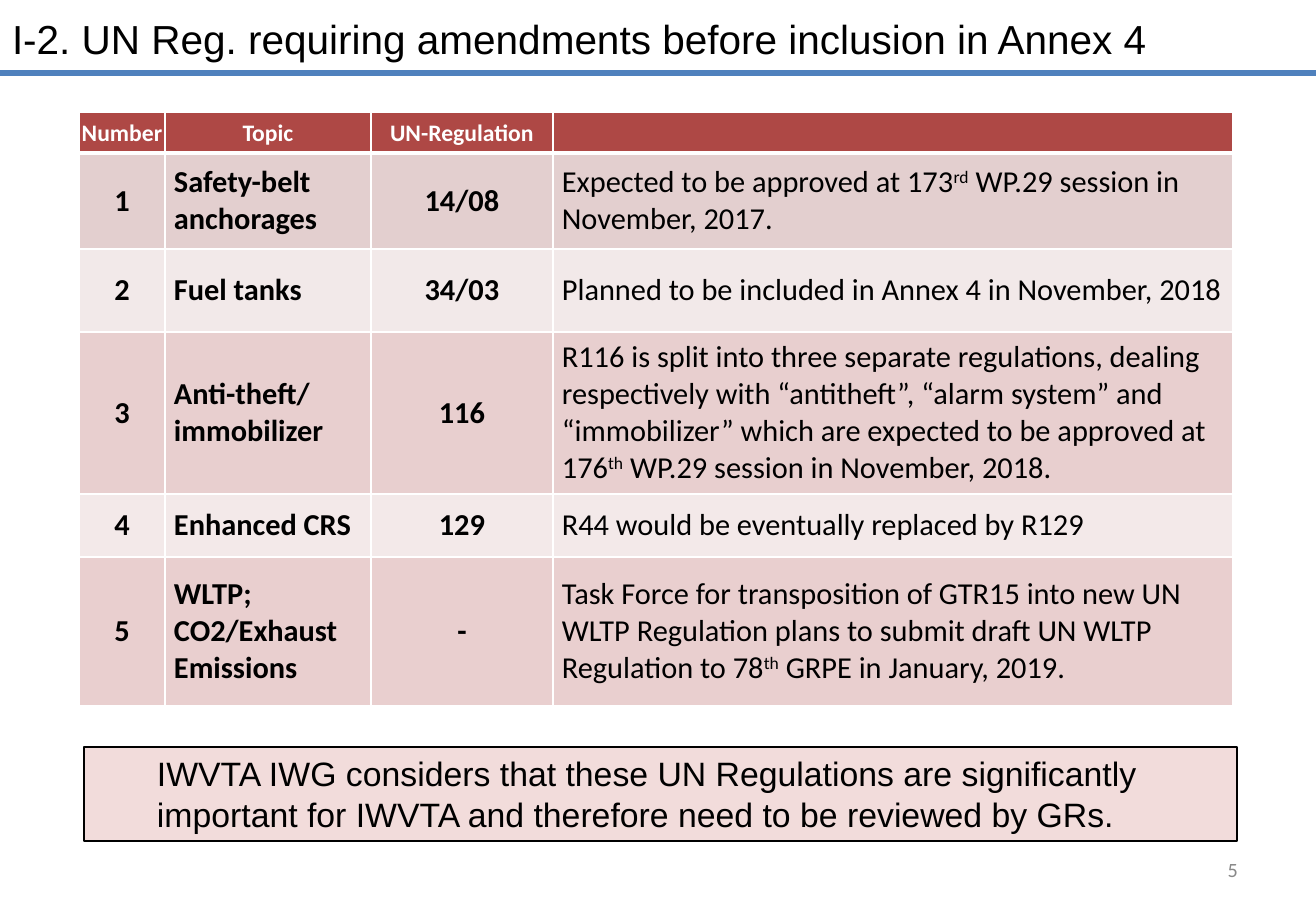
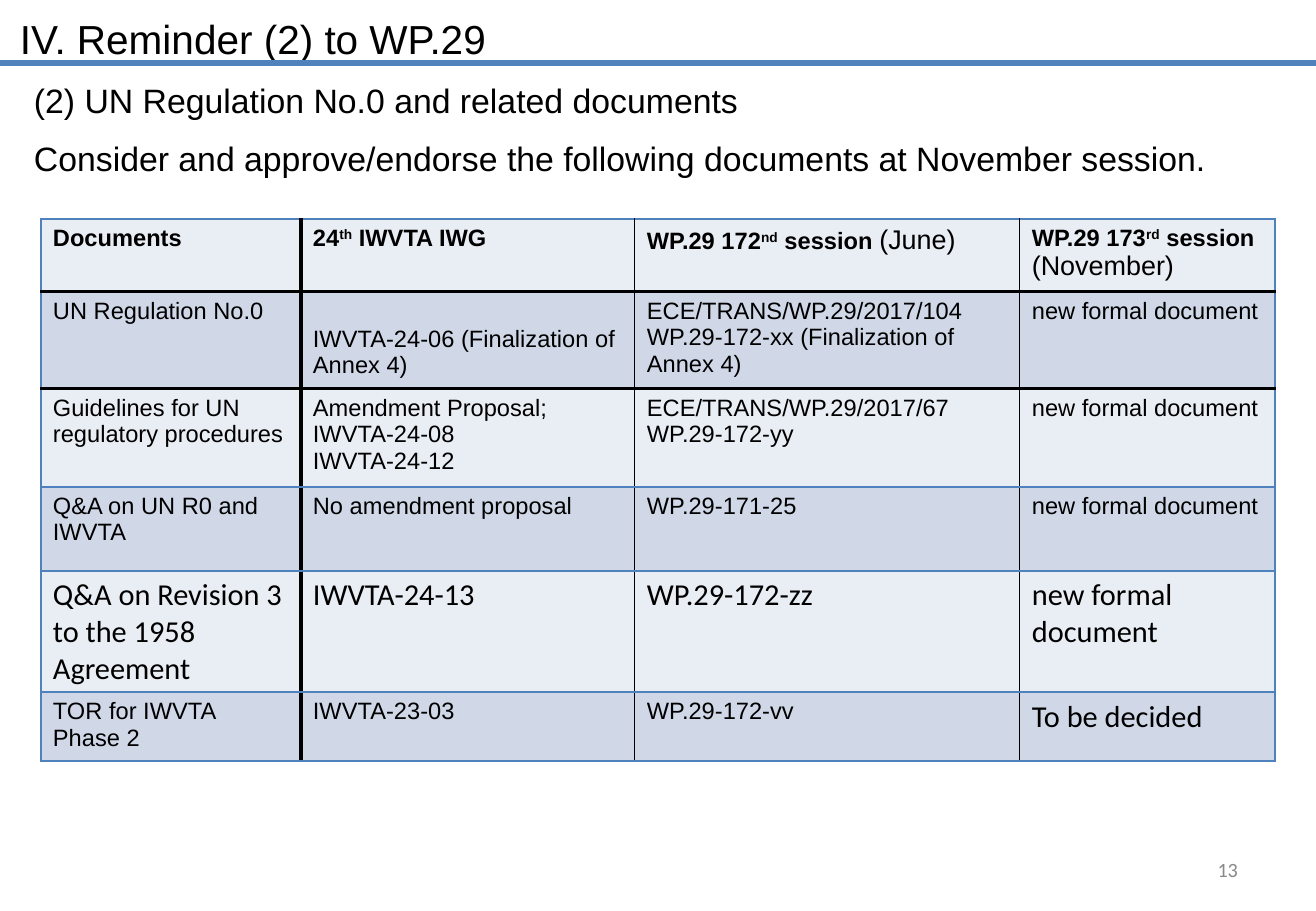
from dataclasses import dataclass

from lxml import etree
from pptx import Presentation
from pptx.dml.color import RGBColor
from pptx.enum.shapes import MSO_CONNECTOR, MSO_SHAPE
from pptx.enum.text import MSO_ANCHOR, MSO_AUTO_SIZE, PP_ALIGN
from pptx.oxml.ns import qn
from pptx.util import Pt

LEFT, CENTER, RIGHT, JUSTIFY = PP_ALIGN.LEFT, PP_ALIGN.CENTER, PP_ALIGN.RIGHT, PP_ALIGN.JUSTIFY
TOP, MIDDLE = MSO_ANCHOR.TOP, MSO_ANCHOR.MIDDLE
STRAIGHT, RECTANGLE = MSO_CONNECTOR.STRAIGHT, MSO_SHAPE.RECTANGLE
TITLE_ONLY = 5
EMU_PER_PX = 7526
SLIDE_WIDTH, SLIDE_HEIGHT = 1316, 911


@dataclass(frozen=True)
class Theme:
    heading_font: str = "Arial"
    body_font: str = "Calibri"
    black: str = "000000"
    white: str = "FFFFFF"
    grey: str = "898989"
    blue: str = "4F81BD"
    red_header: str = "AE4845"
    red_rows: tuple = ("E3CFCF", "F2E9E9", "E8CFCF", "F3E9E9", "E9CFCF")
    note_fill: str = "F2DCDB"
    blue_rows: tuple = ("E9EDF4", "D0D8E8")
    title_size: int = 24
    lead_size: int = 20
    large_size: int = 18
    tail_size: int = 16
    small_size: int = 14
    number_size: int = 12


THEME = Theme()

# Content: ^ encloses superscript, | starts a larger regular tail
AMENDMENTS = {
    "title": "I-2. UN Reg. requiring amendments before inclusion in Annex 4",
    "number": "5",
    "columns": (86, 206, 182, 680),
    "rows": (
        (41, ("Number", "Topic", "UN-Regulation", "")),
        (96, ("1", "Safety-belt anchorages", "14/08",
              "Expected to be approved at 173^rd^ WP.29 session in November, 2017.")),
        (83, ("2", "Fuel tanks", "34/03",
              "Planned to be included in Annex 4 in November, 2018")),
        (162, ("3", "Anti-theft/ immobilizer", "116",
               "R116 is split into three separate regulations, dealing respectively with "
               "“antitheft”, “alarm system” and “immobilizer” which are expected to be "
               "approved at 176^th^ WP.29 session in November, 2018.")),
        (63, ("4", "Enhanced CRS", "129", "R44 would be eventually replaced by R129")),
        (149, ("5", "WLTP; CO2/Exhaust Emissions", "-",
               "Task Force for transposition of GTR15 into new UN WLTP Regulation plans to "
               "submit draft UN WLTP Regulation to 78^th^ GRPE in January, 2019.")),
    ),
    "note": "IWVTA IWG considers that these UN Regulations are significantly "
            "important for IWVTA and therefore need to be reviewed by GRs.",
}

REMINDER = {
    "title": "IV. Reminder (2) to WP.29",
    "number": "13",
    "lead": "(2) UN Regulation No.0 and related documents\n"
            "Consider and approve/endorse the following documents at November session.",
    "columns": (260, 334, 385, 255),
    "rows": (
        (72, ("Documents", "24^th^ IWVTA IWG", "WP.29 172^nd^ session |(June)",
              "WP.29 173^rd^ session |(November)")),
        (97, ("UN Regulation No.0", "IWVTA-24-06 (Finalization of Annex 4)",
              "ECE/TRANS/WP.29/2017/104\nWP.29-172-xx (Finalization of Annex 4)",
              "new formal document")),
        (98, ("Guidelines for UN regulatory procedures",
              "Amendment Proposal;\nIWVTA-24-08\nIWVTA-24-12",
              "ECE/TRANS/WP.29/2017/67\nWP.29-172-yy", "new formal document")),
        (84, ("Q&A on UN R0 and IWVTA", "No amendment proposal", "WP.29-171-25",
              "new formal document")),
        (121, ("Q&A on Revision 3\nto the 1958 Agreement", "IWVTA-24-13", "WP.29-172-zz",
               "new formal document")),
        (69, ("TOR for IWVTA Phase 2", "IWVTA-23-03", "WP.29-172-vv", "To be decided")),
    ),
    "large_cells": {(4, 0), (4, 1), (4, 2), (4, 3), (5, 3)},
    "lowered_cell": (1, 1),
}


def px(length):
    return length * EMU_PER_PX


def box(*lengths):
    return [px(length) for length in lengths]


def color(value):
    return RGBColor.from_string(value)


def write_text(frame, text, *, size, font=THEME.heading_font, ink=THEME.black,
               bold=False, align=LEFT, gap=0):
    """Write one paragraph per line, with superscripts and an optional tail."""
    frame.word_wrap = True
    for index, line in enumerate(text.split("\n")):
        paragraph = frame.add_paragraph() if index else frame.paragraphs[0]
        paragraph.alignment = align
        if index and gap:
            paragraph.space_before = Pt(gap)
        main, _, tail = line.partition("|")
        pieces = [(part, size, bold, position % 2)
                  for position, part in enumerate(main.split("^"))]
        pieces.append((tail, THEME.tail_size, False, 0))
        for part, part_size, part_bold, raised in pieces:
            if not part:
                continue
            run = paragraph.add_run()
            run.text = part
            run.font.name, run.font.size, run.font.bold = font, Pt(part_size), part_bold
            run.font.color.rgb = color(ink)
            if raised:
                run._r.get_or_add_rPr().set("baseline", "30000")


def set_margins(target, left, top, right, bottom):
    target.margin_left, target.margin_top = px(left), px(top)
    target.margin_right, target.margin_bottom = px(right), px(bottom)


def set_borders(cell, **borders):
    """Draw the cell's sides; each border is a (color, points) pair."""
    properties = cell._tc.get_or_add_tcPr()
    for side in "LRTB":
        ink, width = borders[side]
        line = etree.SubElement(properties, qn("a:ln" + side), w=str(int(Pt(width))))
        fill = etree.SubElement(line, qn("a:solidFill"))
        etree.SubElement(fill, qn("a:srgbClr"), val=ink)


def add_grid(slide, left, top, content, format_cell):
    """Add a table and let format_cell(cell, row, column, text) style each cell."""
    columns, rows = content["columns"], content["rows"]
    height = sum(row_height for row_height, _ in rows)
    table = slide.shapes.add_table(len(rows), len(columns),
                                   *box(left, top, sum(columns), height)).table
    table.horz_banding = False
    for index, width in enumerate(columns):
        table.columns[index].width = px(width)
    for row, (row_height, texts) in enumerate(rows):
        table.rows[row].height = px(row_height)
        for column, text in enumerate(texts):
            format_cell(table.cell(row, column), row, column, text)


def add_base_slide(presentation, content, title_left, rule_y):
    """Add a slide with its title, blue rule and slide number."""
    slide = presentation.slides.add_slide(presentation.slide_layouts[TITLE_ONLY])
    title = slide.shapes.title
    title.left, title.top, title.width, title.height = box(
        title_left, 8, SLIDE_WIDTH - title_left, 61)
    title.text_frame.vertical_anchor = TOP
    title.text_frame.auto_size = MSO_AUTO_SIZE.NONE
    set_margins(title.text_frame, 12, 6, 12, 6)
    write_text(title.text_frame, content["title"], size=THEME.title_size)

    rule = slide.shapes.add_connector(STRAIGHT, *box(0, rule_y, SLIDE_WIDTH, rule_y))
    rule.line.color.rgb, rule.line.width = color(THEME.blue), Pt(3)
    etree.SubElement(rule._element.spPr, qn("a:effectLst"))

    number = slide.shapes.add_textbox(*box(943, 845, 307, 49)).text_frame
    number.vertical_anchor = MIDDLE
    write_text(number, content["number"], size=THEME.number_size,
               font=THEME.body_font, ink=THEME.grey, align=RIGHT)
    return slide


def format_amendment_cell(cell, row, column, text):
    header = row == 0
    thin, thick = (THEME.white, 1), (THEME.white, 3)
    set_borders(cell, L=thin, R=thin, T=thick if row == 1 else thin,
                B=thick if header else thin)
    cell.fill.solid()
    cell.fill.fore_color.rgb = color(THEME.red_header if header else THEME.red_rows[row - 1])
    cell.vertical_anchor = MIDDLE
    set_margins(cell, *((1, 1, 1, 0) if header else (9, 0, 9, 0)))
    write_text(cell.text_frame, text, font=THEME.body_font,
               size=THEME.small_size if header else THEME.large_size,
               ink=THEME.white if header else THEME.black,
               bold=header or column < 3,
               align=CENTER if header else (CENTER, JUSTIFY, CENTER, LEFT)[column])


def format_document_cell(cell, row, column, text):
    blue, thin, thick = (THEME.blue, 1), (THEME.black, 0.75), (THEME.black, 2.25)
    verticals = (blue, thick, thin, thin, blue)
    horizontals = (blue, thick, thick, blue, blue, blue, blue)
    set_borders(cell, L=verticals[column], R=verticals[column + 1],
                T=horizontals[row], B=horizontals[row + 1])
    cell.fill.solid()
    cell.fill.fore_color.rgb = color(THEME.blue_rows[row % 2])
    lowered = (row, column) == REMINDER["lowered_cell"]
    set_margins(cell, 12, 34 if lowered else 6, 12, 6)
    large = (row, column) in REMINDER["large_cells"]
    write_text(cell.text_frame, text, bold=row == 0,
               font=THEME.body_font if large else THEME.heading_font,
               size=THEME.large_size if large else THEME.small_size)


def build_amendments(presentation):
    slide = add_base_slide(presentation, AMENDMENTS, 0, 73)
    add_grid(slide, 79, 112, AMENDMENTS, format_amendment_cell)

    # Boxed conclusion below the table
    note = slide.shapes.add_shape(RECTANGLE, *box(84, 747, 1153, 94))
    note.shadow.inherit = False
    note.fill.solid()
    note.fill.fore_color.rgb = color(THEME.note_fill)
    note.line.color.rgb, note.line.width = color(THEME.black), Pt(0.75)
    note.text_frame.vertical_anchor = TOP
    set_margins(note.text_frame, 73, 6, 12, 6)
    write_text(note.text_frame, AMENDMENTS["note"], size=THEME.lead_size)


def build_reminder(presentation):
    slide = add_base_slide(presentation, REMINDER, 8, 63)

    # Lead text above the table
    lead = slide.shapes.add_textbox(*box(22, 74, 1277, 110)).text_frame
    write_text(lead, REMINDER["lead"], size=THEME.lead_size, gap=10)
    add_grid(slide, 41, 219, REMINDER, format_document_cell)


def main():
    presentation = Presentation()
    presentation.slide_width, presentation.slide_height = box(SLIDE_WIDTH, SLIDE_HEIGHT)
    build_amendments(presentation)
    build_reminder(presentation)
    presentation.save("out.pptx")


if __name__ == "__main__":
    main()
